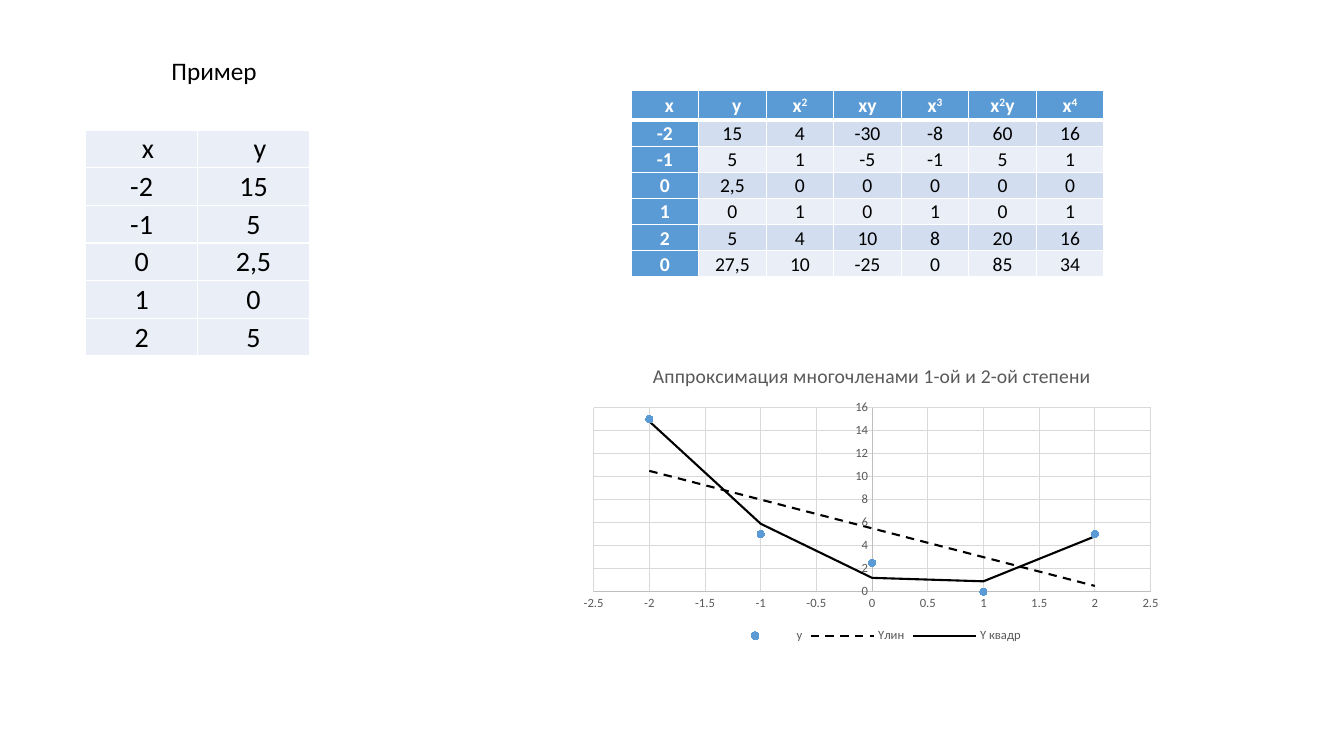
"""Build a slide on least-squares fitting with two tables and a scatter chart."""
import itertools
from dataclasses import dataclass
from typing import Optional

import lxml.etree
import pptx
import pptx.chart.chart
import pptx.chart.data
import pptx.dml.color
import pptx.enum.chart
import pptx.enum.dml
import pptx.enum.text
import pptx.oxml.ns
import pptx.slide
import pptx.table
import pptx.text.text
import pptx.util
from pptx.util import Inches


@dataclass(frozen=True)
class Theme:
    font: str = "Calibri"
    black: str = "000000"
    white: str = "FFFFFF"
    accent: str = "5B9BD5"
    dark_band: str = "D2DEEF"
    light_band: str = "EAEFF7"
    chart_text: str = "595959"
    axis: str = "BFBFBF"
    grid: str = "D9D9D9"
    title_size: int = 18
    data_size: int = 20
    sums_size: int = 14
    chart_title_size: int = 14
    chart_size: int = 9


@dataclass(frozen=True)
class TableSpec:
    left: float
    top: float
    column_width: float
    row_heights: tuple[float, ...]
    rows: tuple[tuple[str, ...], ...]
    size: int
    side_inset: float
    top_inset: float
    line_spacing: float
    accented: bool


@dataclass(frozen=True)
class Series:
    name: str
    values: tuple[float, ...]
    line: Optional[pptx.enum.dml.MSO_LINE]


THEME = Theme()
X_VALUES = (-2, -1, 0, 1, 2)

DATA = TableSpec(
    0.85, 1.29, 1.11, (2.24 / 6,) * 6,
    (("  x", "  y"), ("-2", "15"), ("-1", "5"), ("0", "2,5"), ("1", "0"), ("2", "5")),
    THEME.data_size, 0.01, 0.01, 1.0, False,
)
SUMS = TableSpec(
    6.26, 0.9, 0.67, (0.29,) + (0.26,) * 6,
    (
        ("  x", "  y", "x2", "xy", "x3", "x2y", "x4"),
        ("-2", "15", "4", "-30", "-8", "60", "16"),
        ("-1", "5", "1", "-5", "-1", "5", "1"),
        ("0", "2,5", "0", "0", "0", "0", "0"),
        ("1", "0", "1", "0", "1", "0", "1"),
        ("2", "5", "4", "10", "8", "20", "16"),
        ("0", "27,5", "10", "-25", "0", "85", "34"),
    ),
    THEME.sums_size, 0.07, 0, 1.05, True,
)
SERIES = (
    Series("  y", (15, 5, 2.5, 0, 5), None),
    Series("Yлин", (10.5, 8, 5.5, 3, 0.5), pptx.enum.dml.MSO_LINE.DASH),
    Series("Y квадр", (14.8, 5.9, 1.2, 0.9, 4.8), pptx.enum.dml.MSO_LINE.SOLID),
)


def rgb(code: str) -> pptx.dml.color.RGBColor:
    """Turn a hex code into a colour."""
    return pptx.dml.color.RGBColor.from_string(code)


def style_font(font: pptx.text.text.Font, size: int, color: str, bold: bool = False) -> None:
    """Set the typeface, size, colour and weight of a font."""
    font.name, font.size, font.bold = THEME.font, pptx.util.Pt(size), bold
    font.color.rgb = rgb(color)


def set_borders(cell: pptx.table._Cell, bottom: float) -> None:
    """Draw white borders, one point wide except for the bottom."""
    properties = cell._tc.get_or_add_tcPr()
    for index, (side, width) in enumerate((("L", 1), ("R", 1), ("T", 1), ("B", bottom))):
        border = lxml.etree.Element(pptx.oxml.ns.qn(f"a:ln{side}"), w=str(pptx.util.Pt(width)))
        fill = lxml.etree.SubElement(border, pptx.oxml.ns.qn("a:solidFill"))
        lxml.etree.SubElement(fill, pptx.oxml.ns.qn("a:srgbClr"), val=THEME.white)
        properties.insert(index, border)


def write_powers(paragraph: pptx.text.text._Paragraph, formula: str) -> None:
    """Write a formula with its digits raised as exponents."""
    for is_power, symbols in itertools.groupby(formula, str.isdigit):
        run = paragraph.add_run()
        run.text = "".join(symbols)
        if is_power:
            run._r.get_or_add_rPr().set("baseline", "30000")


def add_table(slide: pptx.slide.Slide, spec: TableSpec) -> None:
    """Draw a table with its fills, borders and centred text."""
    column_count = len(spec.rows[0])
    table = slide.shapes.add_table(
        len(spec.rows), column_count, Inches(spec.left), Inches(spec.top),
        Inches(spec.column_width * column_count), Inches(sum(spec.row_heights)),
    ).table
    for column in table.columns:
        column.width = Inches(spec.column_width)
    for row_index, (height, texts) in enumerate(zip(spec.row_heights, spec.rows)):
        table.rows[row_index].height = Inches(height)
        at_bottom = spec.accented and row_index == len(spec.rows) - 1
        for column_index, text in enumerate(texts):
            cell = table.cell(row_index, column_index)
            heading = spec.accented and (row_index == 0 or column_index == 0)
            banded = spec.accented and row_index % 2 == 1
            cell.margin_left = cell.margin_right = Inches(spec.side_inset)
            cell.margin_top, cell.margin_bottom = Inches(spec.top_inset), 0
            anchors = pptx.enum.text.MSO_ANCHOR
            cell.vertical_anchor = anchors.BOTTOM if at_bottom else anchors.MIDDLE
            cell.fill.solid()
            band = THEME.dark_band if banded else THEME.light_band
            cell.fill.fore_color.rgb = rgb(THEME.accent if heading else band)
            set_borders(cell, 3 if spec.accented and row_index == 0 else 1)
            paragraph = cell.text_frame.paragraphs[0]
            if row_index == 0:
                write_powers(paragraph, text)
            else:
                paragraph.text = text
            paragraph.alignment = pptx.enum.text.PP_ALIGN.CENTER
            paragraph.line_spacing = spec.line_spacing
            style_font(paragraph.font, spec.size, THEME.white if heading else THEME.black, heading)


def set_plot_area(chart: pptx.chart.chart.Chart, **fractions: float) -> None:
    """Fix the inner plot area as fractions of the chart."""
    area = chart._chartSpace.chart.plotArea
    for previous in area.findall(pptx.oxml.ns.qn("c:layout")):
        area.remove(previous)
    layout = lxml.etree.Element(pptx.oxml.ns.qn("c:layout"))
    manual = lxml.etree.SubElement(layout, pptx.oxml.ns.qn("c:manualLayout"))
    settings = {"layoutTarget": "inner", "xMode": "edge", "yMode": "edge", **fractions}
    for name, value in settings.items():
        lxml.etree.SubElement(manual, pptx.oxml.ns.qn(f"c:{name}"), val=str(value))
    area.insert(0, layout)


def add_fit_chart(slide: pptx.slide.Slide) -> None:
    """Draw the measured points with the linear and quadratic fits."""
    data = pptx.chart.data.XyChartData()
    for spec in SERIES:
        points = data.add_series(spec.name)
        for x, y in zip(X_VALUES, spec.values):
            points.add_data_point(x, y)
    chart = slide.shapes.add_chart(
        pptx.enum.chart.XL_CHART_TYPE.XY_SCATTER_SMOOTH,
        Inches(5.68), Inches(3.45), Inches(5.94), Inches(2.97), data,
    ).chart
    style_font(chart.font, THEME.chart_size, THEME.chart_text)
    chart.has_title = True
    heading = chart.chart_title.text_frame.paragraphs[0]
    heading.text = "Аппроксимация многочленами 1-ой и 2-ой степени"
    style_font(heading.font, THEME.chart_title_size, THEME.chart_text)
    chart.chart_title.include_in_layout = False
    chart.has_legend = True
    chart.legend.position = pptx.enum.chart.XL_LEGEND_POSITION.BOTTOM
    chart.legend.include_in_layout = False
    style_font(chart.legend.font, THEME.chart_size, THEME.chart_text)
    chart.plots[0].vary_by_categories = False
    set_plot_area(chart, x=0.035, y=0.2, w=0.93, h=0.615)

    axes = ((chart.category_axis, -2.5, 2.5, 0.5), (chart.value_axis, 0, 16, 2))
    for axis, low, high, step in axes:
        axis.minimum_scale, axis.maximum_scale, axis.major_unit = low, high, step
        axis.major_tick_mark = axis.minor_tick_mark = pptx.enum.chart.XL_TICK_MARK.NONE
        axis.has_major_gridlines = True
        for line, color in ((axis.format.line, THEME.axis), (axis.major_gridlines.format.line, THEME.grid)):
            line.width, line.color.rgb = pptx.util.Pt(0.75), rgb(color)
        axis.tick_labels.number_format = "General"
        axis.tick_labels.number_format_is_linked = False
        style_font(axis.tick_labels.font, THEME.chart_size, THEME.chart_text)

    for spec, series in zip(SERIES, chart.plots[0].series):
        series.smooth = True
        if spec.line is None:
            series.format.line.fill.background()
            series.marker.style, series.marker.size = pptx.enum.chart.XL_MARKER_STYLE.CIRCLE, 5
            series.marker.format.fill.solid()
            series.marker.format.fill.fore_color.rgb = rgb(THEME.accent)
            series.marker.format.line.color.rgb = rgb(THEME.accent)
        else:
            series.marker.style = pptx.enum.chart.XL_MARKER_STYLE.NONE
            series.format.line.width = pptx.util.Pt(1.5)
            series.format.line.color.rgb = rgb(THEME.black)
            series.format.line.dash_style = spec.line


def add_title(slide: pptx.slide.Slide) -> None:
    """Place and format the slide title."""
    title = slide.shapes.title
    title.left, title.top, title.width, title.height = map(Inches, (1.6, 0.5, 3.29, 0.4))
    title.text_frame.vertical_anchor = pptx.enum.text.MSO_ANCHOR.TOP
    title.text_frame.auto_size = pptx.enum.text.MSO_AUTO_SIZE.NONE
    paragraph = title.text_frame.paragraphs[0]
    paragraph.text = "Пример"
    paragraph.alignment = pptx.enum.text.PP_ALIGN.LEFT
    style_font(paragraph.font, THEME.title_size, THEME.black)


def main() -> None:
    """Assemble and save the presentation."""
    presentation = pptx.Presentation()
    presentation.slide_width, presentation.slide_height = Inches(13.33), Inches(7.5)
    slide = presentation.slides.add_slide(presentation.slide_layouts[5])
    add_title(slide)
    for spec in (DATA, SUMS):
        add_table(slide, spec)
    add_fit_chart(slide)
    presentation.save("out.pptx")


if __name__ == "__main__":
    main()
